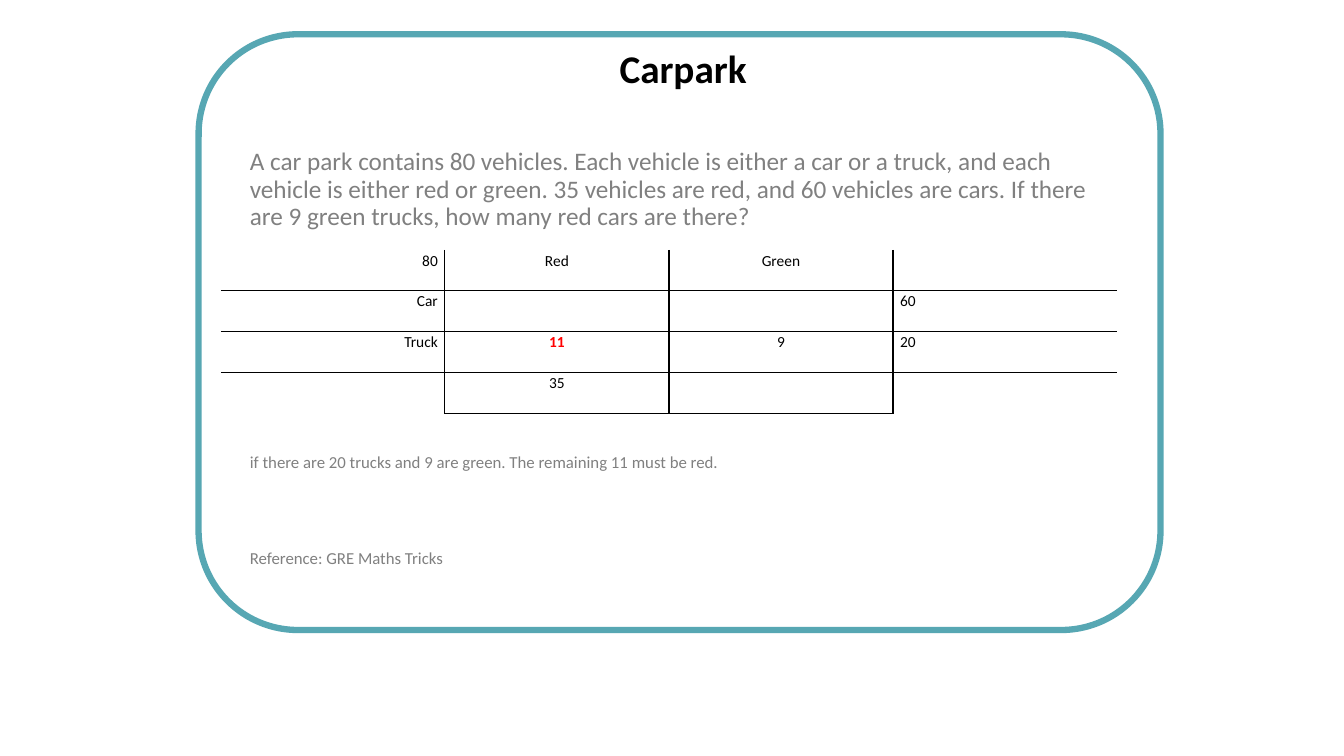
from lxml import etree
from pptx import Presentation
from pptx.dml.color import RGBColor
from pptx.enum.shapes import MSO_SHAPE
from pptx.enum.text import PP_ALIGN
from pptx.oxml.ns import qn
from pptx.util import Inches, Pt

ROUNDED = MSO_SHAPE.ROUNDED_RECTANGLE
LEFT, CENTER, RIGHT = PP_ALIGN.LEFT, PP_ALIGN.CENTER, PP_ALIGN.RIGHT

FONT = "Calibri"
COLORS = {"frame": "57A7B3", "ink": "000000", "body": "808080", "answer": "FF0000"}

QUESTION = (
    "A car park contains 80 vehicles. Each vehicle is either a car or a truck, "
    "and each vehicle is either red or green. 35 vehicles are red, and 60 vehicles "
    "are cars. If there are 9 green trucks, how many red cars are there?"
)
EXPLANATION = "if there are 20 trucks and 9 are green. The remaining 11 must be red."
REFERENCE = "Reference: GRE Maths Tricks"

VEHICLES = [
    ["80", "Red", "Green", ""],
    ["Car", "", "", "60"],
    ["Truck", "11", "9", "20"],
    ["", "35", "", ""],
]
COLUMN_ALIGN = [RIGHT, CENTER, CENTER, LEFT]
ANSWER_CELL = (2, 1)


def style_paragraph(para, size, color, align=LEFT, bold=False, spacing=1.0):
    para.alignment = align
    para.line_spacing = spacing
    para.font.name = FONT
    para.font.size = Pt(size)
    para.font.bold = bold
    para.font.color.rgb = RGBColor.from_string(COLORS[color])


def add_text(page, box, text, size, color, **style):
    left, top, width, height = map(Inches, box)
    frame = page.shapes.add_textbox(left, top, width, height).text_frame
    frame.word_wrap = True
    para = frame.paragraphs[0]
    para.text = text
    style_paragraph(para, size, color, **style)


def add_card(page, box):
    """Rounded frame with the title at its top."""
    left, top, width, height = box
    card = page.shapes.add_shape(ROUNDED, *map(Inches, box))
    card.shadow.inherit = False
    card.fill.background()
    card.line.color.rgb = RGBColor.from_string(COLORS["frame"])
    card.line.width = Pt(4.5)
    add_text(page, (left + 0.22, top + 0.05, 9.17, 0.6), "Carpark", 28, "ink",
             align=CENTER, bold=True)


def add_body(page, box):
    """Question above the table, explanation and reference below it."""
    left, top, width, height = box
    for offset, text_height, text, size in (
        (0, 0.95, QUESTION, 18),
        (3.02, 0.3, EXPLANATION, 12),
        (3.98, 0.3, REFERENCE, 12),
    ):
        add_text(page, (left, top + offset, width, text_height), text, size, "body",
                 spacing=0.9)


def set_borders(cell, visible):
    """Draw the named sides (L, R, T, B) and clear the others."""
    properties = cell._tc.get_or_add_tcPr()
    for position, side in enumerate("LRTB"):
        line = etree.Element(qn(f"a:ln{side}"), w=str(Pt(1)))
        if side in visible:
            fill = etree.SubElement(line, qn("a:solidFill"))
            etree.SubElement(fill, qn("a:srgbClr"), val=COLORS["ink"])
        else:
            etree.SubElement(line, qn("a:noFill"))
        properties.insert(position, line)


def add_vehicle_table(page, box):
    """Two-way table: inner rules only, closed below the middle columns."""
    rows, columns = len(VEHICLES), len(COLUMN_ALIGN)
    table = page.shapes.add_table(rows, columns, *map(Inches, box)).table
    table.first_row = table.horz_banding = False
    for row, values in enumerate(VEHICLES):
        for column, value in enumerate(values):
            cell = table.cell(row, column)
            cell.fill.background()
            cell.margin_left = cell.margin_right = Inches(0.07)
            cell.margin_top = cell.margin_bottom = 0
            para = cell.text_frame.paragraphs[0]
            para.text = value
            is_answer = (row, column) == ANSWER_CELL
            style_paragraph(para, 11, "answer" if is_answer else "ink",
                            align=COLUMN_ALIGN[column], bold=is_answer, spacing=1.07)
            middle = 0 < column < columns - 1
            sides = {
                "L": column > 0,
                "R": column < columns - 1,
                "T": row > 0,
                "B": row < rows - 1 or middle,
            }
            set_borders(cell, [side for side, drawn in sides.items() if drawn])


def main():
    deck = Presentation()
    deck.slide_width, deck.slide_height = Inches(13.33), Inches(7.5)
    page = deck.slides.add_slide(deck.slide_layouts[6])
    add_card(page, (1.97, 0.34, 9.54, 5.91))
    add_body(page, (2.38, 1.43, 8.56, 4.29))
    add_vehicle_table(page, (2.19, 2.48, 8.89, 1.62))
    deck.save("out.pptx")


if __name__ == "__main__":
    main()
